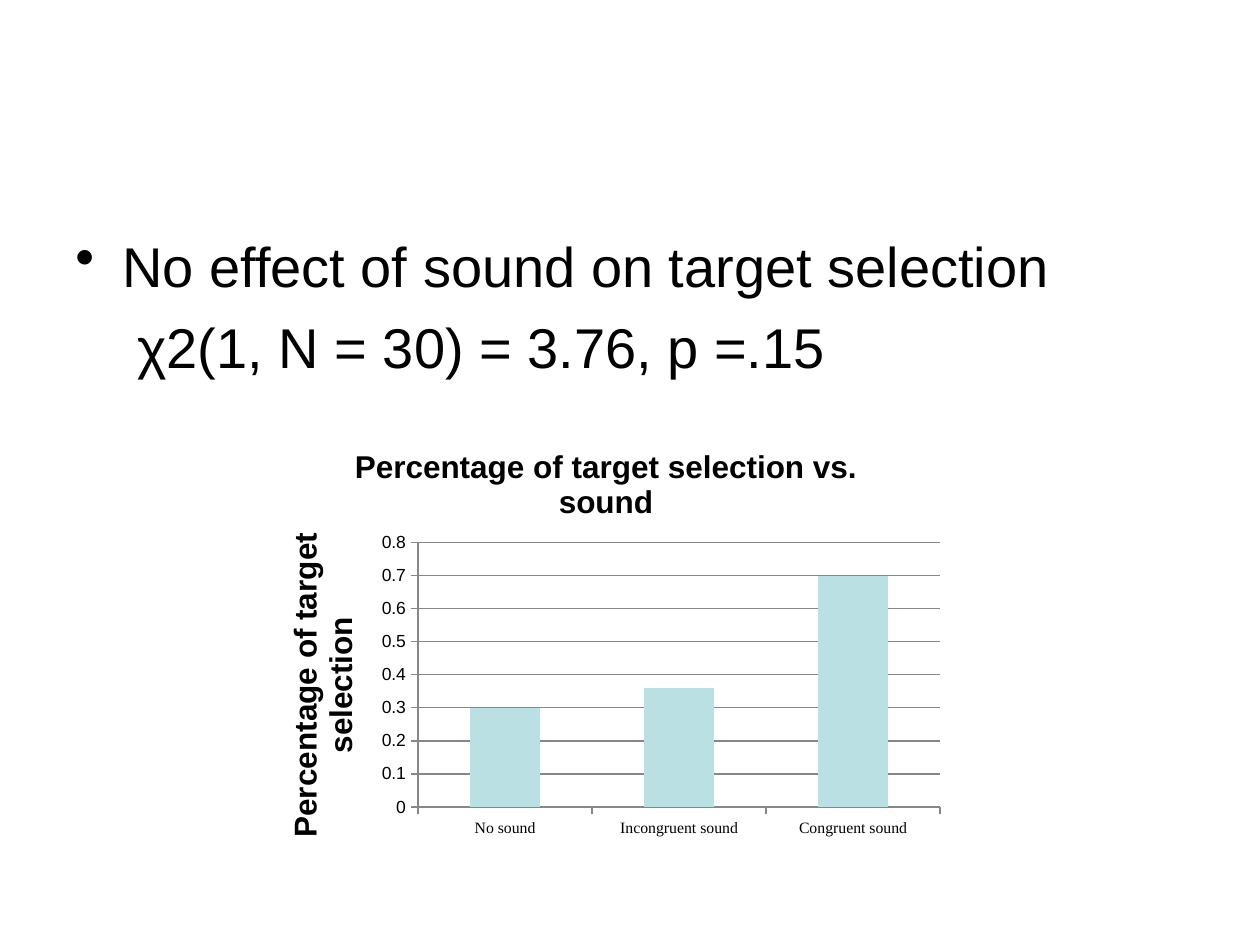
from lxml import etree
from pptx import Presentation
from pptx.chart.data import CategoryChartData
from pptx.dml.color import RGBColor
from pptx.enum.chart import XL_CHART_TYPE, XL_TICK_MARK
from pptx.oxml import parse_xml
from pptx.oxml.ns import nsdecls, qn
from pptx.util import Pt

COLUMNS = XL_CHART_TYPE.COLUMN_CLUSTERED
TICK_OUTSIDE = XL_TICK_MARK.OUTSIDE
PX = 914400 / 126
BLACK, GRAY, BAR = "000000", "878787", "BBE0E3"

FINDINGS = [
    # text, left margin px, first-line indent px, bullet, space before pt
    ("No effect of sound on target selection", 47, -47, "•", 0),
    ("χ2(1, N = 30) = 3.76, p =.15", 62, 0, None, 8),
]
FINDINGS_BOX = (63, 220, 1134, 624)
CHART_BOX = (258, 425, 696, 420)
PLOT_BOX = (420, 541, 520, 264)
CHART_TITLE = "Percentage of target selection vs. sound"
AXIS_TITLE = "Percentage of target selection"
SELECTION = {"No sound": 0.3, "Incongruent sound": 0.36, "Congruent sound": 0.7}


def px(value):
    return round(value * PX)


def color(value):
    return RGBColor.from_string(value)


def set_font(font, size, name="Arial", bold=False):
    for key, value in {"size": Pt(size), "name": name, "bold": bold}.items():
        setattr(font, key, value)
    font.color.rgb = color(BLACK)


def add_findings(slide):
    box = slide.shapes.add_textbox(*map(px, FINDINGS_BOX))
    frame = box.text_frame
    frame.word_wrap = True
    frame.margin_top = px(11)
    for index, (text, margin, indent, bullet, before) in enumerate(FINDINGS):
        paragraph = frame.add_paragraph() if index else frame.paragraphs[0]
        paragraph.text = text
        properties = paragraph._p.get_or_add_pPr()
        properties.set("marL", str(px(margin)))
        properties.set("indent", str(px(indent)))
        if bullet:
            etree.SubElement(properties, qn("a:buChar")).set("char", bullet)
        paragraph.space_before = Pt(before)
        set_font(paragraph.runs[0].font, 32)


def set_title(owner, text):
    """Give a chart or an axis a bold title."""
    frame = (owner.chart_title if hasattr(owner, "chart_title") else owner.axis_title).text_frame
    frame.text = text
    set_font(frame.paragraphs[0].runs[0].font, 18, bold=True)


def place_plot(chart):
    """Fix the inner plot area as fractions of the chart frame."""
    left, top, width, height = CHART_BOX
    plot_left, plot_top, plot_width, plot_height = PLOT_BOX
    fractions = {"x": (plot_left - left) / width, "y": (plot_top - top) / height,
                 "w": plot_width / width, "h": plot_height / height}
    modes = '<c:layoutTarget val="inner"/><c:xMode val="edge"/><c:yMode val="edge"/>'
    sizes = "".join(f'<c:{key} val="{value:.2f}"/>' for key, value in fractions.items())
    layout = parse_xml(f'<c:layout {nsdecls("c")}><c:manualLayout>{modes}{sizes}'
                       "</c:manualLayout></c:layout>")
    plot_area = chart._chartSpace.chart.plotArea
    for old in plot_area.findall(qn("c:layout")):
        plot_area.remove(old)
    plot_area.insert(0, layout)


def add_selection_chart(slide):
    data = CategoryChartData()
    data.categories = list(SELECTION)
    data.add_series("Series 1", list(SELECTION.values()))
    chart = slide.shapes.add_chart(COLUMNS, *map(px, CHART_BOX), data).chart
    chart.has_legend = False
    set_font(chart.font, 10)
    set_title(chart, CHART_TITLE)

    category_axis, value_axis = chart.category_axis, chart.value_axis
    set_title(value_axis, AXIS_TITLE)
    value_axis.minimum_scale, value_axis.maximum_scale, value_axis.major_unit = 0, 0.8, 0.1
    value_axis.has_major_gridlines = True
    for axis in (category_axis, value_axis):
        axis.major_tick_mark = TICK_OUTSIDE
    set_font(category_axis.tick_labels.font, 9, "Times New Roman")
    for part in (category_axis, value_axis, value_axis.major_gridlines):
        part.format.line.color.rgb = color(GRAY)
        part.format.line.width = Pt(0.75)

    plot = chart.plots[0]
    plot.gap_width = 150
    plot.vary_by_categories = False
    fill = plot.series[0].format.fill
    fill.solid()
    fill.fore_color.rgb = color(BAR)
    place_plot(chart)


def main():
    presentation = Presentation()
    presentation.slide_width, presentation.slide_height = px(1260), px(945)
    slide = presentation.slides.add_slide(presentation.slide_layouts[6])
    add_findings(slide)
    add_selection_chart(slide)
    presentation.save("out.pptx")


if __name__ == "__main__":
    main()
